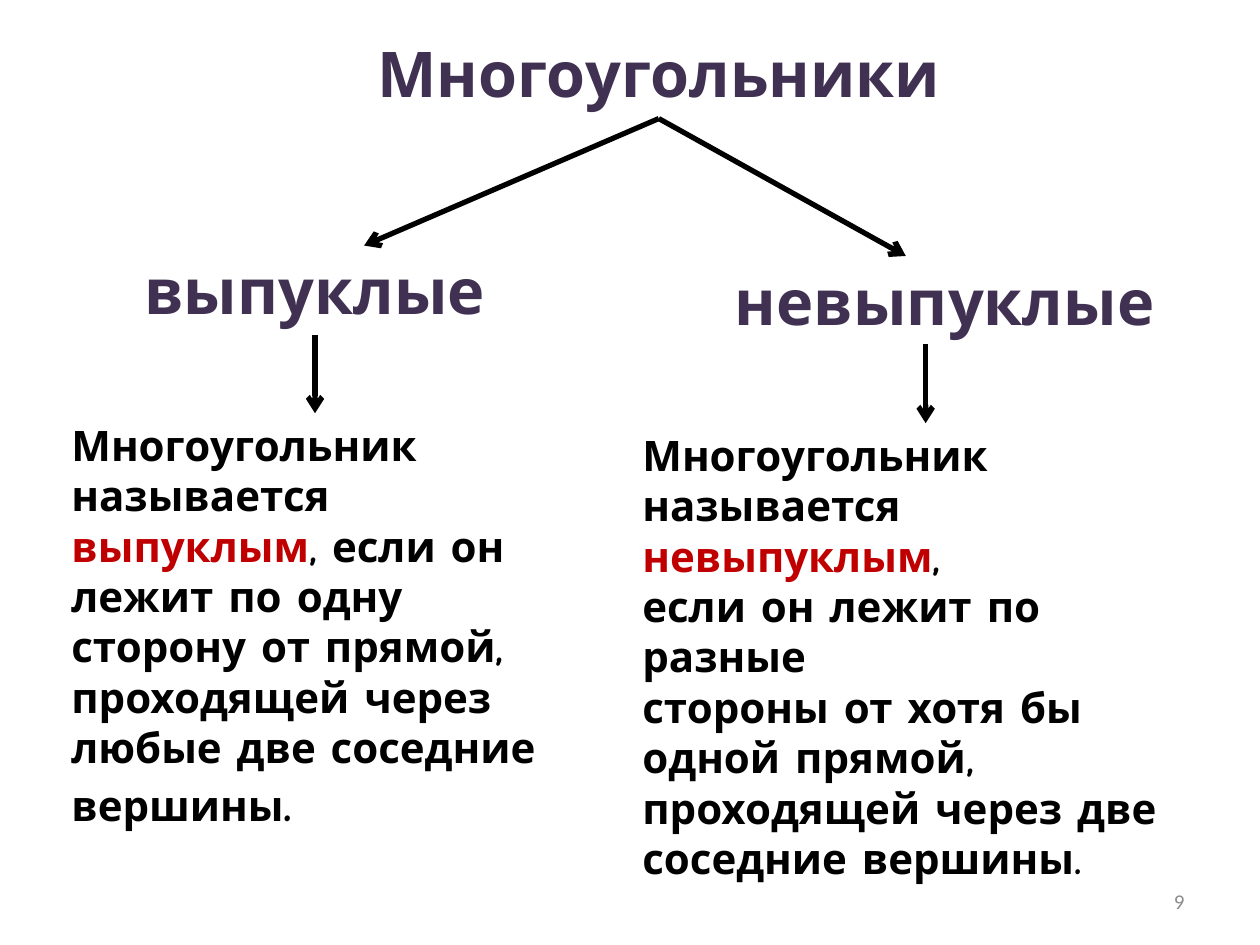
from dataclasses import dataclass

from lxml.etree import SubElement
from pptx import Presentation
from pptx.dml.color import RGBColor
from pptx.enum.shapes import MSO_CONNECTOR
from pptx.enum.text import MSO_ANCHOR, PP_ALIGN
from pptx.oxml.ns import qn
from pptx.util import Cm, Pt


@dataclass(frozen=True)
class Theme:
    heading: RGBColor = RGBColor(0x40, 0x31, 0x52)
    body: RGBColor = RGBColor(0, 0, 0)
    term: RGBColor = RGBColor(0xC0, 0, 0)
    muted: RGBColor = RGBColor(0x8C, 0x8C, 0x8C)
    font: str = "Comic Neue"
    number_font: str = "Calibri"
    heading_size: int = 36
    body_size: int = 24
    stop_size: int = 28
    number_size: int = 12
    line_width: int = 3


THEME = Theme()


@dataclass(frozen=True)
class Run:
    text: str
    color: RGBColor = THEME.body
    size: int = THEME.body_size
    font: str = THEME.font
    bold: bool = True


@dataclass(frozen=True)
class Box:
    left: float
    top: float
    width: float
    height: float


@dataclass(frozen=True)
class Arrow:
    x1: float
    y1: float
    x2: float
    y2: float


@dataclass(frozen=True)
class Branch:
    name: str
    name_box: Box
    definition: list[list[Run]]
    definition_box: Box
    arrows: list[Arrow]


BRANCHES = [
    Branch(
        "выпуклые",
        Box(1.19, 4.95, 10.31, 1.8),
        [[
            Run("Многоугольник называется "),
            Run("выпуклым", THEME.term),
            Run(", если он лежит по одну сторону от прямой, "
                "проходящей через любые две соседние вершины"),
            Run(".", size=THEME.stop_size),
        ]],
        Box(1.19, 8.33, 10.31, 7.59),
        [Arrow(13.28, 2.39, 7.34, 4.95), Arrow(6.35, 6.76, 6.35, 8.33)],
    ),
    Branch(
        "невыпуклые",
        Box(13.89, 5.16, 10.31, 1.8),
        [
            [Run("Многоугольник")],
            [Run("называется "), Run("невыпуклым", THEME.term), Run(",")],
            [Run("если он лежит по разные")],
            [Run("стороны от хотя бы")],
            [Run("одной прямой,")],
            [Run("проходящей через две")],
            [Run("соседние вершины.")],
        ],
        Box(12.7, 8.53, 11.51, 7.44),
        [Arrow(13.28, 2.39, 18.26, 5.16), Arrow(18.66, 6.94, 18.66, 8.53)],
    ),
]


def add_text(s, box: Box, paragraphs: list[list[Run]], *,
             align=PP_ALIGN.LEFT, anchor=MSO_ANCHOR.TOP) -> None:
    sp = s.shapes.add_textbox(
        Cm(box.left), Cm(box.top), Cm(box.width), Cm(box.height))
    tf = sp.text_frame
    tf.word_wrap = True
    tf.vertical_anchor = anchor
    for i, runs in enumerate(paragraphs):
        p = tf.add_paragraph() if i else tf.paragraphs[0]
        p.alignment = align
        for run in runs:
            r = p.add_run()
            r.text = run.text
            r.font.name = run.font
            r.font.size = Pt(run.size)
            r.font.bold = run.bold
            r.font.color.rgb = run.color


def add_heading(s, box: Box, text: str) -> None:
    run = Run(text, THEME.heading, THEME.heading_size)
    add_text(s, box, [[run]], align=PP_ALIGN.CENTER)


def add_arrow(s, arrow: Arrow) -> None:
    sp = s.shapes.add_connector(
        MSO_CONNECTOR.STRAIGHT,
        Cm(arrow.x1), Cm(arrow.y1), Cm(arrow.x2), Cm(arrow.y2))
    sp.line.color.rgb = THEME.body
    sp.line.width = Pt(THEME.line_width)
    SubElement(sp.line._get_or_add_ln(), qn("a:tailEnd"), type="arrow")
    SubElement(sp._element.spPr, qn("a:effectLst"))


def main() -> None:
    prs = Presentation()
    prs.slide_width, prs.slide_height = Cm(25.4), Cm(19.05)
    s = prs.slides.add_slide(prs.slide_layouts[6])
    add_heading(s, Box(3.76, 0.58, 19.05, 1.8), "Многоугольники")
    for branch in BRANCHES:
        for arrow in branch.arrows:
            add_arrow(s, arrow)
        add_heading(s, branch.name_box, branch.name)
        add_text(s, branch.definition_box, branch.definition)
    number = Run("9", THEME.muted, THEME.number_size, THEME.number_font, False)
    add_text(s, Box(18.2, 17.66, 5.93, 1.01), [[number]],
             align=PP_ALIGN.RIGHT, anchor=MSO_ANCHOR.MIDDLE)
    prs.save("out.pptx")


if __name__ == "__main__":
    main()
